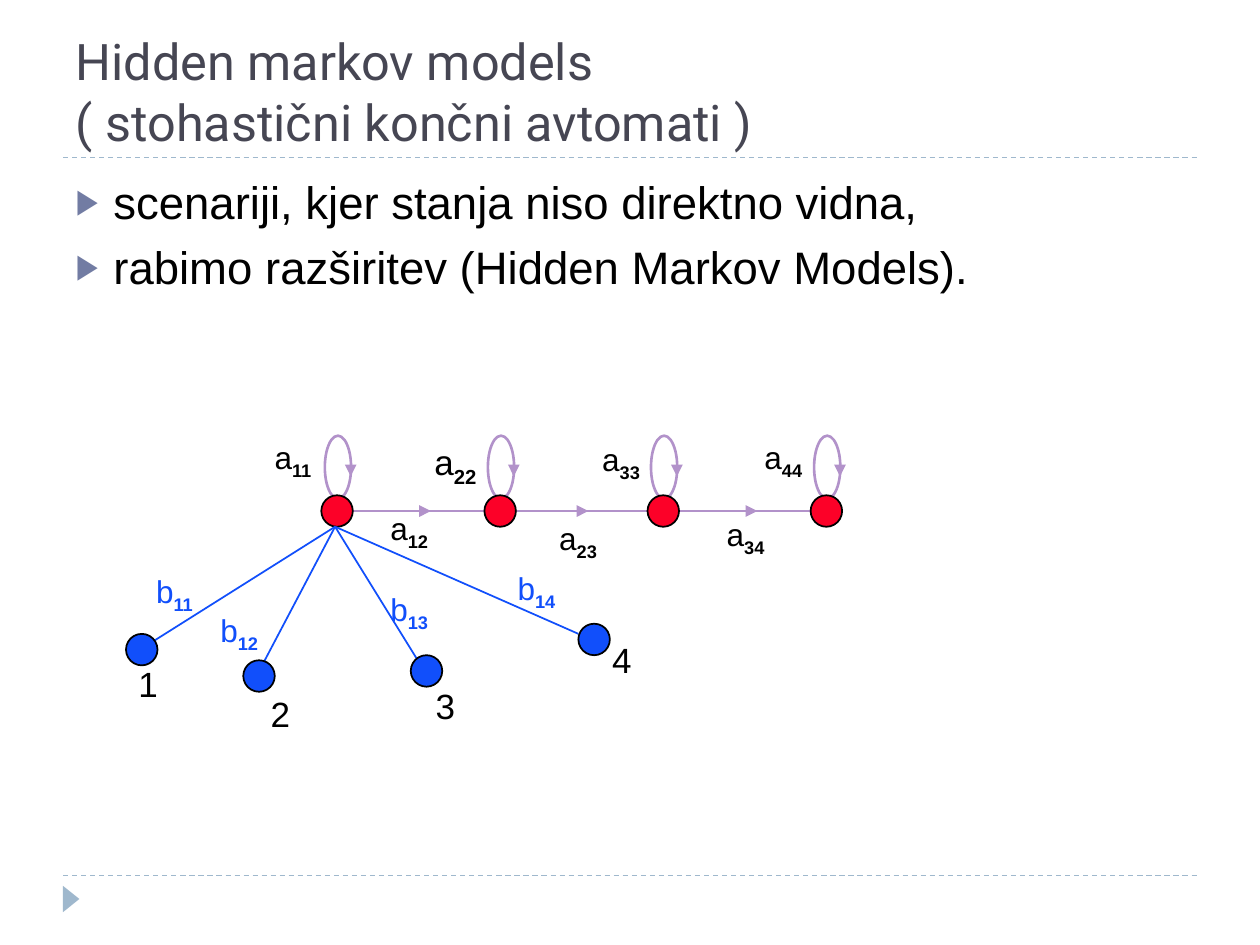
from pptx import Presentation
from pptx.dml.color import RGBColor
from pptx.enum.dml import MSO_LINE_DASH_STYLE as Dash
from pptx.enum.shapes import MSO_CONNECTOR as Link, MSO_SHAPE as Shape
from pptx.enum.text import MSO_ANCHOR as Anchor, MSO_AUTO_SIZE as Fit, PP_ALIGN as Align
from pptx.oxml.ns import qn
from pptx.util import Pt
from lxml.etree import SubElement

BLACK = RGBColor(0x00, 0x00, 0x00)
SLATE = RGBColor(0x46, 0x46, 0x53)
BULLET = RGBColor(0x72, 0x7C, 0xA3)
PALE = RGBColor(0x9F, 0xB8, 0xCD)
PURPLE = RGBColor(0xB2, 0x92, 0xCA)
RED = RGBColor(0xFC, 0x01, 0x28)
BLUE = RGBColor(0x11, 0x4F, 0xFB)

DIAMETER = 18
STATE_TOP = 283
STATE_XS = [183.6 + 93.2 * index for index in range(4)]
ARROW_XS = [240.5, 330.5, 427]
FAN_START = (191.5, 301)


def apply(target, values):
    for name, value in values.items():
        setattr(target, name, value)


class Sketch:
    def __init__(self, page, font="Arial"):
        self.page = page
        self.font = font

    def place(self, shape, left, top, width, height):
        apply(shape, dict(left=Pt(left), top=Pt(top), width=Pt(width), height=Pt(height)))

    def style(self, span, size, color, font=None, bold=False):
        apply(span.font, dict(name=font or self.font, size=Pt(size), bold=bold))
        span.font.color.rgb = color

    def title(self, text, bounds):
        box = self.page.shapes.title
        self.place(box, *bounds)
        apply(box.text_frame, dict(text=text, vertical_anchor=Anchor.BOTTOM, auto_size=Fit.NONE))
        para = box.text_frame.paragraphs[0]
        para.alignment = Align.LEFT
        for span in para.runs:
            self.style(span, 28.8, SLATE, "Roboto")

    def bullets(self, lines, bounds):
        box = self.page.placeholders[1]
        self.place(box, *bounds)
        apply(box.text_frame, dict(text="\n".join(lines), auto_size=Fit.NONE))
        for para in box.text_frame.paragraphs:
            para.space_before = Pt(6)
            self.style(para.runs[0], 26, BLACK)
            props = para._p.get_or_add_pPr()
            props.set("marL", str(Pt(21.6)))
            props.set("indent", str(Pt(-21.6)))
            SubElement(SubElement(props, qn("a:buClr")), qn("a:srgbClr"), val=str(BULLET))
            SubElement(props, qn("a:buSzPct"), val="76000")
            SubElement(props, qn("a:buChar"), char="▶")

    def shape(self, kind, bounds, fill=None, line=None, weight=1, rotation=0):
        item = self.page.shapes.add_shape(kind, *map(Pt, bounds))
        item.shadow.inherit = False
        item.rotation = rotation
        if fill is None:
            item.fill.background()
        else:
            item.fill.solid()
            item.fill.fore_color.rgb = fill
        if line is None:
            item.line.fill.background()
        else:
            item.line.color.rgb = line
            item.line.width = Pt(weight)

    def node(self, left, top, fill):
        self.shape(Shape.OVAL, (left, top, DIAMETER, DIAMETER), fill, BLACK)

    def line(self, start, end, color, weight, arrow=False, dash=None):
        item = self.page.shapes.add_connector(Link.STRAIGHT, *map(Pt, (*start, *end)))
        apply(item.line, dict(width=Pt(weight), dash_style=dash))
        item.line.color.rgb = color
        if arrow:
            SubElement(item.line._get_or_add_ln(), qn("a:tailEnd"), type="triangle")
        SubElement(item._element.spPr, qn("a:effectLst"))

    def label(self, text, left, top, subscript="", size=18, color=BLACK):
        box = self.page.shapes.add_textbox(*map(Pt, (left, top, 42, 29)))
        box.text_frame.word_wrap = True
        para = box.text_frame.paragraphs[0]
        span = para.add_run()
        span.text = text
        self.style(span, size, color)
        if subscript:
            span = para.add_run()
            span.text = subscript
            self.style(span, size, color, bold=True)
            span.font._element.set("baseline", "-25000")


def main():
    deck = Presentation()
    apply(deck, dict(slide_width=Pt(720), slide_height=Pt(540)))
    page = deck.slides.add_slide(deck.slide_layouts[1])
    sketch = Sketch(page)

    for y in (500.4, 90):
        sketch.line((36, y), (684, y), PALE, 0.75, dash=Dash.DASH)
    sketch.shape(Shape.ISOSCELES_TRIANGLE, (33.1, 509, 15.1, 9.4), PALE, rotation=90)
    sketch.title("Hidden markov models\v( stohastični končni avtomati )", (36, 12.2, 648, 77.8))
    sketch.bullets(
        ["scenariji, kjer stanja niso direktno vidna,", "rabimo razširitev (Hidden Markov Models)."],
        (36, 95.8, 648, 388.8),
    )

    middle = STATE_TOP + DIAMETER / 2
    for left, following, arrow_x in zip(STATE_XS, STATE_XS[1:], ARROW_XS):
        sketch.line((left + DIAMETER, middle), (following, middle), PURPLE, 1.5)
        sketch.line((arrow_x, middle), (arrow_x + 5.8, middle), PURPLE, 2.25, arrow=True)
    for left in STATE_XS:
        sketch.shape(Shape.OVAL, (left + 2, 249, 15, 36), line=PURPLE, weight=1.5)
        sketch.line((left + 16.8, 266.4), (left + 16.8, 272.2), PURPLE, 2.25, arrow=True)
        sketch.node(left, STATE_TOP, RED)

    for subscript, left, top, size in [
        ("11", 149.8, 247, 18),
        ("22", 241.2, 248.4, 20),
        ("33", 337, 247.7, 18),
        ("44", 429.8, 247, 18),
        ("12", 216, 287.3, 18),
        ("23", 312.5, 293, 18),
        ("34", 408.2, 290.9, 18),
    ]:
        sketch.label("a", left, top, subscript, size)

    outputs = [
        ((72, 362.2), (86.4, 367.2), (82.1, 323.3), (72, 375.1)),
        ((139, 377.3), (149.8, 380.2), (118.8, 345.6), (147.6, 392.4)),
        ((234.7, 374.4), (240.5, 380.2), (216, 333.4), (241.9, 387.4)),
        ((330.5, 356.4), (330.5, 362.2), (288.7, 321.8), (342.7, 361.4)),
    ]
    for number, (corner, line_end, weight_at, name_at) in enumerate(outputs, 1):
        sketch.line(FAN_START, line_end, BLUE, 1)
        sketch.node(*corner, BLUE)
        sketch.label("b", *weight_at, f"1{number}", color=BLUE)
        sketch.label(str(number), *name_at, size=20)

    deck.save("out.pptx")


if __name__ == "__main__":
    main()
